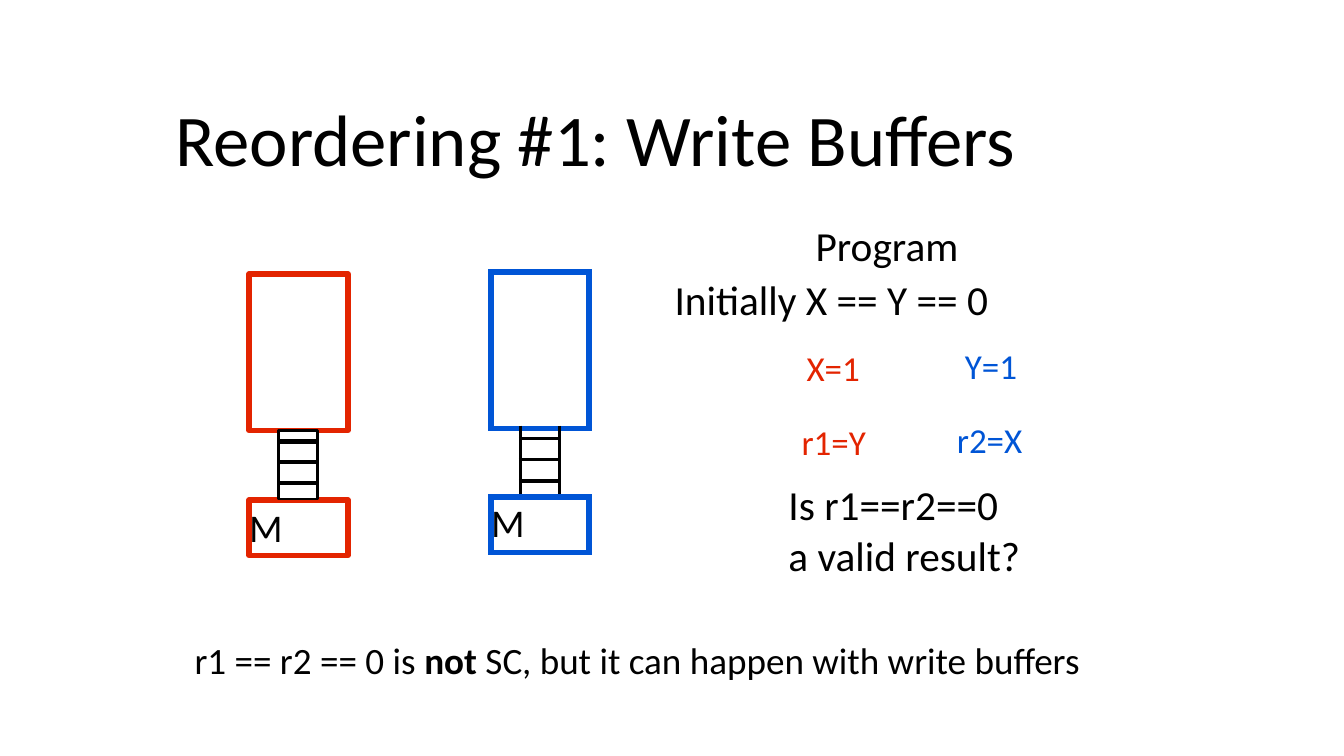
from dataclasses import dataclass

from lxml import etree
from pptx import Presentation
from pptx.dml.color import RGBColor
from pptx.enum.shapes import MSO_CONNECTOR, MSO_SHAPE
from pptx.enum.text import MSO_ANCHOR, PP_ALIGN
from pptx.oxml.ns import qn
from pptx.util import Inches, Pt

RECT = MSO_SHAPE.RECTANGLE
LINE = MSO_CONNECTOR.STRAIGHT
TOP = MSO_ANCHOR.TOP
LEFT = PP_ALIGN.LEFT


@dataclass(frozen=True)
class Theme:
    """Colours, font and type sizes of the slide."""
    face: str = "Calibri"
    black: str = "000000"
    white: str = "FFFFFF"
    red: str = "E32400"
    blue: str = "0055D6"
    title: float = 52
    body: float = 29.5
    label: float = 28
    note: float = 26.5
    code: float = 25


THEME = Theme()


def style(para, size, color):
    """Set the look of one paragraph."""
    para.alignment = LEFT
    para.font.name = THEME.face
    para.font.size = Pt(size)
    para.font.color.rgb = RGBColor.from_string(color)


def inset(frame, top):
    """Keep only a top margin in a text frame."""
    frame.margin_left = frame.margin_right = frame.margin_bottom = 0
    frame.margin_top = Inches(top)
    frame.vertical_anchor = TOP
    frame.word_wrap = True


def add_text(slide, box, lines, size, color=THEME.black, top=0.02, space=1):
    """Add a text box with one paragraph per line and return its frame."""
    frame = slide.shapes.add_textbox(*map(Inches, box)).text_frame
    inset(frame, top)
    frame.text = "\n".join(lines)
    for para in frame.paragraphs:
        style(para, size, color)
        para.space_before = Pt(space)
    return frame


def add_box(slide, box, color, width, fill=None):
    """Add an outlined rectangle."""
    shape = slide.shapes.add_shape(RECT, *map(Inches, box))
    shape.shadow.inherit = False
    shape.line.color.rgb = RGBColor.from_string(color)
    shape.line.width = Pt(width)
    if fill:
        shape.fill.solid()
        shape.fill.fore_color.rgb = RGBColor.from_string(fill)
    else:
        shape.fill.background()
    return shape


def add_rung(slide, left, right, y):
    """Add one level line inside the buffer."""
    rung = slide.shapes.add_connector(
        LINE, Inches(left), Inches(y), Inches(right), Inches(y))
    rung.line.color.rgb = RGBColor.from_string(THEME.black)
    rung.line.width = Pt(3)
    etree.SubElement(rung.element.spPr, qn("a:effectLst"))


def add_edge(cell, side, line):
    """Set one border of a table cell, or clear it."""
    props = cell._tc.get_or_add_tcPr()
    edge = etree.SubElement(props, qn("a:ln" + side))
    if line is None:
        etree.SubElement(edge, qn("a:noFill"))
        return
    color, width = line
    edge.set("w", str(Pt(width)))
    fill = etree.SubElement(edge, qn("a:solidFill"))
    etree.SubElement(fill, qn("a:srgbClr"), val=color)


def pick_edges(row, col, last):
    """Return the borders of a cell in the blue core by side."""
    frame = (THEME.blue, 4.5)
    rail = (THEME.black, 2.25)
    rung = (THEME.black, 3)
    if row in (0, last):
        return dict.fromkeys("LRTB", frame)
    step = rung if col == 1 else None
    return {"L": rail if col > 0 else None,
            "R": rail if col < 2 else None,
            "T": frame if row == 1 else step,
            "B": frame if row == last - 1 else step}


def add_blue(slide):
    """Add the blue core, its buffer and its memory as one table."""
    cols = (0.29, 0.39, 0.29)
    rows = (1.55, 0.1, 0.21, 0.21, 0.16, 0.55)
    last = len(rows) - 1
    table = slide.shapes.add_table(
        len(rows), len(cols), Inches(4.87), Inches(2.7),
        Inches(sum(cols)), Inches(sum(rows))).table
    table.first_row = table.horz_banding = False
    for col, width in zip(table.columns, cols):
        col.width = Inches(width)
    for row, height in zip(table.rows, rows):
        row.height = Inches(height)
    for row in range(len(rows)):
        for col in range(len(cols)):
            cell = table.cell(row, col)
            cell.margin_left = cell.margin_right = 0
            cell.margin_top = cell.margin_bottom = 0
            for side, line in pick_edges(row, col, last).items():
                add_edge(cell, side, line)
            cell.fill.background()
            if (row, col) != (last, 0):
                para = cell.text_frame.paragraphs[0]._p
                etree.SubElement(para, qn("a:endParaRPr"), sz="100")
    for row in (0, last):
        table.cell(row, 0).merge(table.cell(row, 2))
    for col in (0, 2):
        table.cell(1, col).merge(table.cell(last - 1, col))
    base = table.cell(last, 0)
    base.margin_top = Inches(0.03)
    base.text = "M"
    style(base.text_frame.paragraphs[0], THEME.label, THEME.black)


def add_red(slide):
    """Add the red core, its memory and the buffer between them."""
    add_box(slide, (2.47, 2.72, 0.98, 1.55), THEME.red, 4)
    base = add_box(slide, (2.47, 4.96, 0.98, 0.55), THEME.red, 4)
    inset(base.text_frame, 0.03)
    base.text_frame.text = "M"
    style(base.text_frame.paragraphs[0], THEME.label, THEME.black)
    add_box(slide, (2.76, 4.27, 0.39, 0.68), THEME.black, 2, THEME.white)
    for step in range(3):
        add_rung(slide, 2.78, 3.14, 4.38 + 0.205 * step)


def add_code(slide):
    """Add the program, its two threads and the question."""
    intro = add_text(slide, (6.69, 2.14, 3.14, 1.09),
                     ["Program Initially X == Y == 0"], THEME.body, top=0.01)
    para = intro.paragraphs[0]
    para.line_spacing = 1.08
    para._p.get_or_add_pPr().set("indent", str(Inches(1.4)))
    threads = (
        (THEME.red, 3.42, (("X=1", 8), ("r1=Y", 7.95))),
        (THEME.blue, 3.4, (("Y=1", 9.57), ("r2=X", 9.49))),
    )
    for color, top, steps in threads:
        for step, (text, left) in enumerate(steps):
            add_text(slide, (left, top + 0.73 * step, 0.75, 0.45),
                     [text], THEME.code, color)
    add_text(slide, (7.82, 4.74, 2.33, 1.01),
             ["Is r1==r2==0", "a valid result?"], THEME.body, top=0.01)


def add_note(slide):
    """Add the closing line with its stressed word."""
    frame = add_text(slide, (1.93, 6.3, 9.2, 0.47), [""], THEME.note)
    para = frame.paragraphs[0]
    for text, bold in (("r1 == r2 == 0 is ", False), ("not ", True),
                       ("SC, but it can happen with write buffers", False)):
        run = para.add_run()
        run.text = text
        run.font.bold = bold


def main():
    """Build the slide and save it."""
    deck = Presentation()
    deck.slide_width, deck.slide_height = Inches(13.33), Inches(7.5)
    slide = deck.slides.add_slide(deck.slide_layouts[6])
    add_text(slide, (1.74, 0.14, 9.87, 1.68),
             ["Reordering #1: Write Buffers"], THEME.title, top=0.79)
    add_red(slide)
    add_blue(slide)
    add_code(slide)
    add_note(slide)
    deck.save("out.pptx")


if __name__ == "__main__":
    main()
